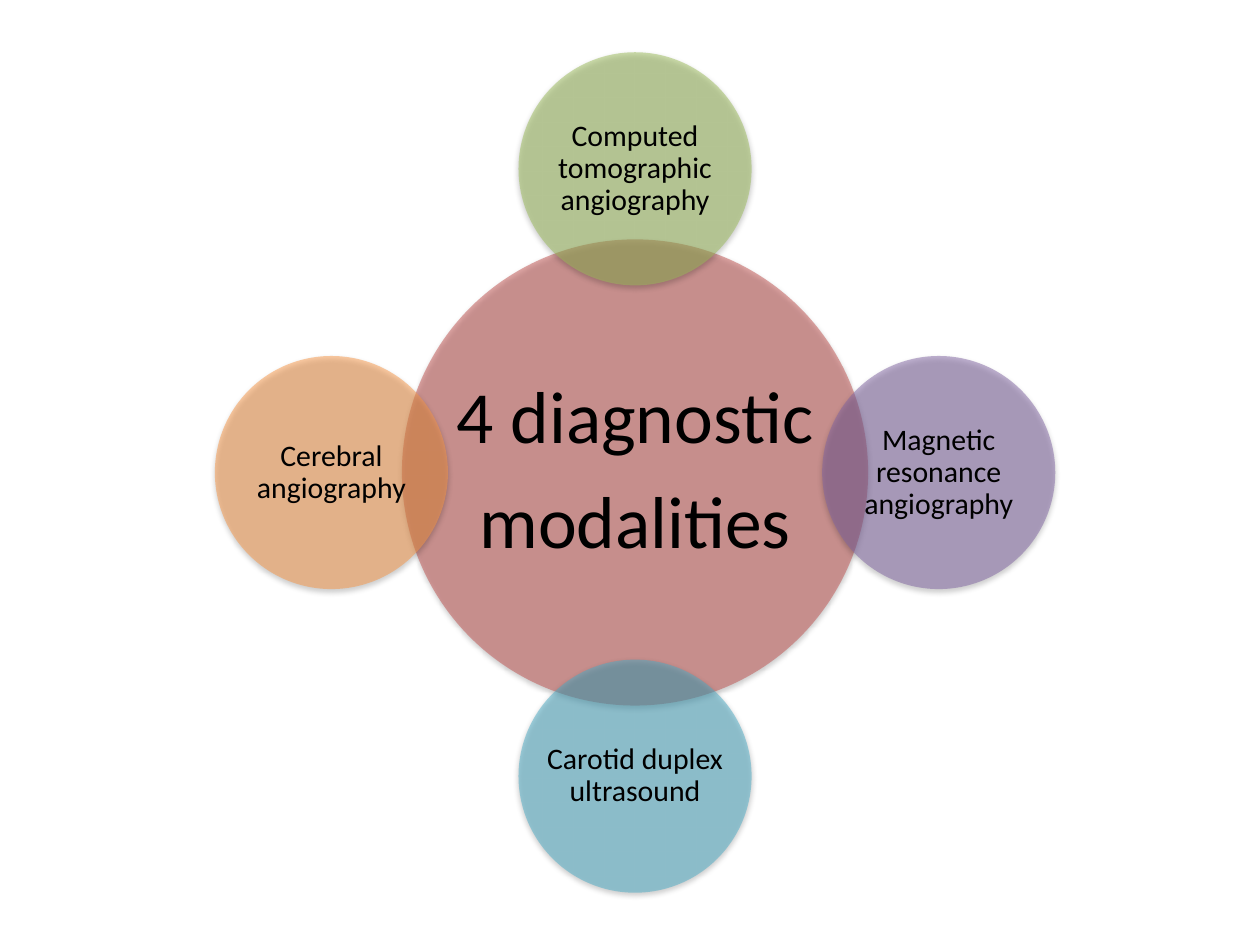
import math
import pptx
import pptx.util
import pptx.dml.color
import pptx.enum.shapes
import pptx.enum.text
import pptx.oxml
import pptx.oxml.ns

COLORS = {
    "hub": "C0504D",
    "green": "9BBB59",
    "purple": "8064A2",
    "teal": "4BACC6",
    "orange": "F79646",
    "text": "000000",
}
SHADOW = (
    '<a:effectLst %s><a:outerShdw blurRad="40000" dist="20000" dir="5400000" '
    'rotWithShape="0"><a:srgbClr val="000000"><a:alpha val="38000"/></a:srgbClr>'
    "</a:outerShdw></a:effectLst>"
) % pptx.oxml.ns.nsdecls("a")
ALPHA = '<a:alpha %s val="50000"/>' % pptx.oxml.ns.nsdecls("a")

HUB_X, HUB_Y = 0.504, 0.5
HUB_SIZE = 0.37
SATELLITE_SIZE = HUB_SIZE / 2
ORBIT = 0.241
SATELLITES = [
    ("Computed tomographic angiography", "green"),
    ("Magnetic resonance angiography", "purple"),
    ("Carotid duplex ultrasound", "teal"),
    ("Cerebral angiography", "orange"),
]


class Diagram:
    font = "Calibri"

    def __init__(self, prs):
        self.w, self.h = prs.slide_width, prs.slide_height
        self.s = prs.slides.add_slide(prs.slide_layouts[6])
        self.group = self.s.shapes.add_group_shape()

    def box(self, x, y, size):
        d = round(size * self.w)
        return round(x * self.w - d / 2), round(y * self.h - d / 2), d, d

    def circle(self, box, color):
        sp = self.group.shapes.add_shape(pptx.enum.shapes.MSO_SHAPE.OVAL, *box)
        sp.fill.solid()
        sp.fill.fore_color.rgb = pptx.dml.color.RGBColor.from_string(COLORS[color])
        sp.line.fill.background()
        rgb = sp._element.spPr.find(".//" + pptx.oxml.ns.qn("a:srgbClr"))
        rgb.append(pptx.oxml.parse_xml(ALPHA))
        sp._element.spPr.append(pptx.oxml.parse_xml(SHADOW))

    def label(self, box, lines, size, inset):
        tf = self.group.shapes.add_textbox(*box).text_frame
        tf.word_wrap = True
        tf.vertical_anchor = pptx.enum.text.MSO_ANCHOR.MIDDLE
        tf.margin_left = tf.margin_right = pptx.util.Inches(inset)
        tf.margin_top = tf.margin_bottom = pptx.util.Inches(inset)
        tf.text = "\n".join(lines)
        for p in tf.paragraphs:
            p.alignment = pptx.enum.text.PP_ALIGN.CENTER
            p.line_spacing = 0.9
            p.space_after = pptx.util.Pt(0.35 * size)
            p.font.name = self.font
            p.font.size = pptx.util.Pt(size)
            p.font.color.rgb = pptx.dml.color.RGBColor.from_string(COLORS["text"])

    def bubble(self, x, y, diameter, color, lines, size, inset):
        box = self.box(x, y, diameter)
        self.circle(box, color)
        self.label(box, lines, size, inset)


def main():
    prs = pptx.Presentation()
    prs.slide_width = pptx.util.Inches(10)
    prs.slide_height = pptx.util.Inches(7.5)
    diagram = Diagram(prs)
    diagram.bubble(HUB_X, HUB_Y, HUB_SIZE, "hub", ["4 diagnostic", "modalities"], 42, 0.06)
    for i, (text, color) in enumerate(SATELLITES):
        angle = 2 * math.pi * i / len(SATELLITES)
        x = HUB_X + ORBIT * math.sin(angle)
        y = HUB_Y - ORBIT * math.cos(angle) * diagram.w / diagram.h
        diagram.bubble(x, y, SATELLITE_SIZE, color, [text], 17, 0.02)
    prs.save("out.pptx")


if __name__ == "__main__":
    main()
